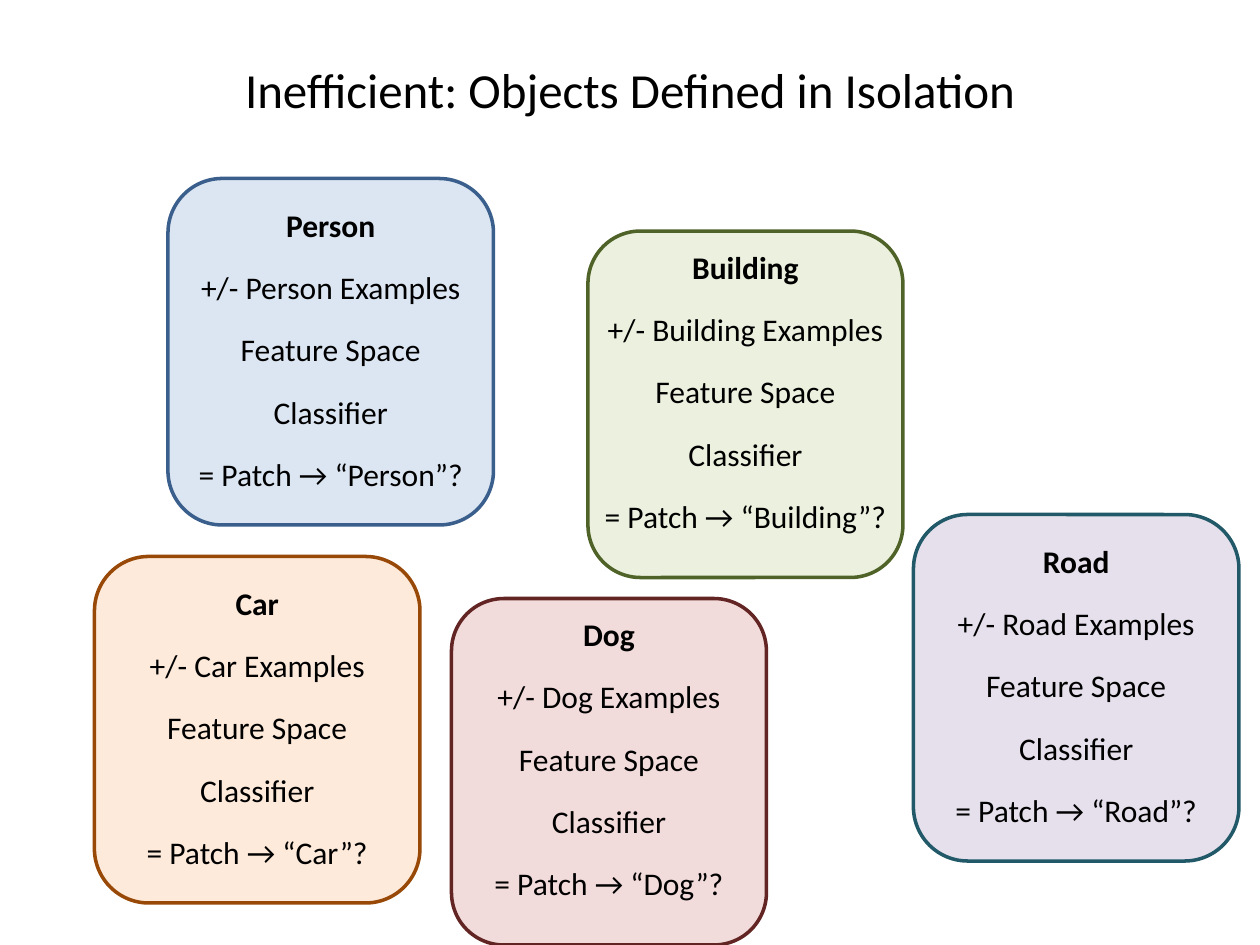
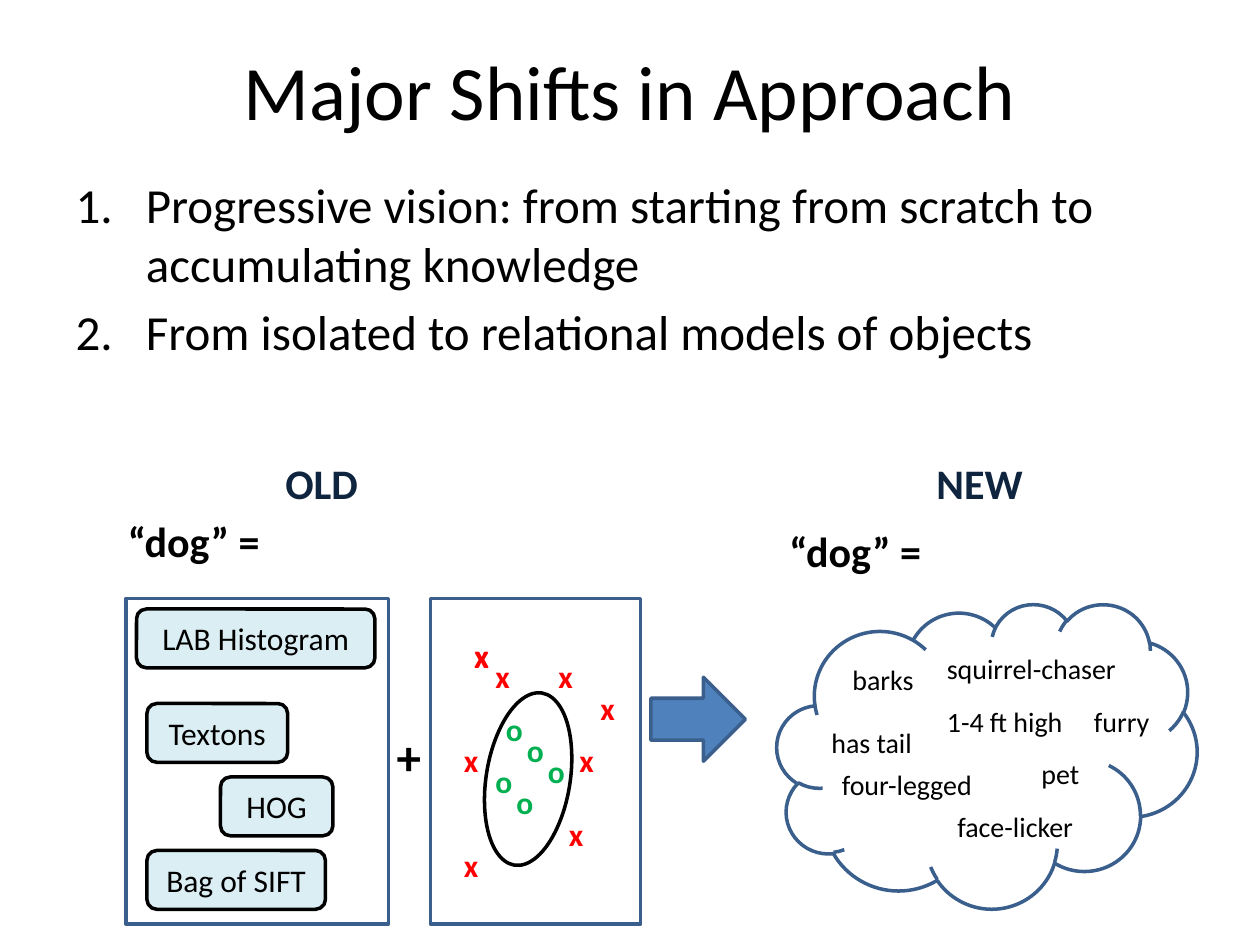
from lxml import etree
from pptx import Presentation
from pptx.dml.color import RGBColor
from pptx.enum.shapes import MSO_SHAPE
from pptx.enum.text import MSO_ANCHOR, PP_ALIGN
from pptx.oxml.ns import qn
from pptx.util import Emu, Pt

ROUNDED = MSO_SHAPE.ROUNDED_RECTANGLE
RECTANGLE = MSO_SHAPE.RECTANGLE
ELLIPSE = MSO_SHAPE.OVAL
CLOUD = MSO_SHAPE.CLOUD
RIGHT_ARROW = MSO_SHAPE.RIGHT_ARROW
CENTER, LEFT = PP_ALIGN.CENTER, PP_ALIGN.LEFT
MIDDLE = MSO_ANCHOR.MIDDLE

PX = 7620  # 120 px to the inch
PAGE_SIZE = (1200, 900)
TITLE_BOX = (60, 10, 1080, 150)
TITLE_ONLY, TITLE_AND_CONTENT = 5, 1

FONT = "Calibri"
BLACK, NAVY = "000000", "0F243E"
OUTLINE, ARROW_BLUE, CHIP_BLUE = "3A5F8C", "4F81BD", "DBEEF4"
RED, GREEN = "FF0000", "00B050"

# name, box, text offset from the top, fill, outline
CARDS = [
    ("Person", (160, 170, 310, 330), 20, "DCE6F2", OUTLINE),
    ("Car", (90, 530, 310, 330), 20, "FDEADA", "984807"),
    ("Road", (870, 490, 310, 330), 20, "E6E0EC", "215968"),
    ("Dog", (430, 570, 300, 330), 10, "F2DCDB", "632523"),
    ("Building", (560, 220, 300, 330), 10, "EBF1DE", "4F6228"),
]
SHIFTS = [
    "Progressive vision: from starting from scratch to accumulating knowledge",
    "From isolated to relational models of objects",
]
# Offsets below are relative to the panel that holds the parts
FEATURES = [
    ("LAB Histogram", 10, 10, 227),
    ("Textons", 20, 100, 134),
    ("Bag of SIFT", 20, 240, 170),
    ("HOG", 90, 170, 107),
]
NEGATIVES = [(30, 31), (30, 30), (50, 50), (110, 50), (20, 130),
             (150, 80), (130, 130), (120, 200), (20, 230)]
POSITIVES = [(60, 100), (80, 120), (100, 140), (70, 170), (50, 150)]
ATTRIBUTES = [
    ("barks", 60, 50, 83),
    ("1-4 ft high", 150, 90, 136),
    ("four-legged", 50, 150, 150),
    ("furry", 290, 90, 78),
    ("face-licker", 160, 190, 136),
    ("squirrel-chaser", 150, 40, 187),
    ("pet", 240, 140, 61),
    ("has tail", 40, 110, 102),
]


def color(value):
    return RGBColor.from_string(value)


def emu(box):
    return [Emu(length * PX) for length in box]


def place(shape, box):
    shape.left, shape.top, shape.width, shape.height = emu(box)


def format_para(para, size, ink=BLACK, bold=False, align=LEFT):
    para.alignment = align
    for span in para.runs:
        span.font.name = FONT
        span.font.size = Pt(size)
        span.font.bold = bold
        span.font.color.rgb = color(ink)


def add_outline(page, kind, box, fill=None, line=OUTLINE):
    shape = page.shapes.add_shape(kind, *emu(box))
    shape.shadow.inherit = False
    if fill:
        shape.fill.solid()
        shape.fill.fore_color.rgb = color(fill)
    else:
        shape.fill.background()
    shape.line.color.rgb = color(line)
    shape.line.width = Pt(2)
    return shape


def add_label(page, text, box, size, ink=BLACK, bold=False):
    frame = page.shapes.add_textbox(*emu(box)).text_frame
    frame.word_wrap = False
    frame.text = text
    format_para(frame.paragraphs[0], size, ink, bold)


def add_page(deck, layout, title, size):
    page = deck.slides.add_slide(deck.slide_layouts[layout])
    place(page.shapes.title, TITLE_BOX)
    frame = page.shapes.title.text_frame
    frame.text = title
    frame.vertical_anchor = MIDDLE
    format_para(frame.paragraphs[0], size, align=CENTER)
    return page


def add_card(page, name, box, text_offset, fill, line):
    left, top, width, _ = box
    add_outline(page, ROUNDED, box, fill, line)
    frame = page.shapes.add_textbox(*emu((left, top + text_offset, width, 290))).text_frame
    frame.word_wrap = True
    frame.text = "\n".join([name, f"+/- {name} Examples", "Feature Space",
                            "Classifier", f"= Patch → “{name}”?"])
    for index, para in enumerate(frame.paragraphs):
        format_para(para, 18, bold=index == 0, align=CENTER)
        para.space_before = Pt(14 if index else 0)


def add_numbered_list(page, items, box):
    body = page.placeholders[1]
    place(body, box)
    body.text_frame.text = "\n".join(items)
    for para in body.text_frame.paragraphs:
        format_para(para, 28)
        properties = para._p.get_or_add_pPr()
        properties.set("marL", str(67 * PX))
        properties.set("indent", str(-67 * PX))
        etree.SubElement(properties, qn("a:buFont"), typeface="+mj-lt")
        etree.SubElement(properties, qn("a:buAutoNum"), type="arabicPeriod")


def add_feature_panel(page, box):
    left, top = box[:2]
    add_outline(page, RECTANGLE, box)
    for name, x, y, width in FEATURES:
        chip = add_outline(page, ROUNDED, (left + x, top + y, width, 56), CHIP_BLUE, BLACK)
        frame = chip.text_frame
        frame.word_wrap = False
        frame.text = name
        frame.vertical_anchor = MIDDLE
        format_para(frame.paragraphs[0], 18, align=CENTER)


def add_classifier_panel(page, box):
    left, top = box[:2]
    add_outline(page, RECTANGLE, box)
    for mark, ink, width, points in (("x", RED, 38, NEGATIVES), ("o", GREEN, 41, POSITIVES)):
        for x, y in points:
            add_label(page, mark, (left + x, top + y, width, 48), 18, ink, True)
    boundary = add_outline(page, ELLIPSE, (left + 53, top + 89, 80, 166), line=BLACK)
    boundary.rotation = 9.1


def add_attribute_cloud(page, box):
    left, top = box[:2]
    add_outline(page, CLOUD, box)
    for word, x, y, width in ATTRIBUTES:
        add_label(page, word, (left + x, top + y, width, 44), 16)


def build_isolation_page(deck):
    page = add_page(deck, TITLE_ONLY, "Inefficient: Objects Defined in Isolation", 28)
    for card in CARDS:
        add_card(page, *card)


def build_shifts_page(deck):
    page = add_page(deck, TITLE_AND_CONTENT, "Major Shifts in Approach", 44)
    add_numbered_list(page, SHIFTS, (60, 160, 1080, 260))

    # Old approach: features plus a classifier
    add_label(page, "OLD", (260, 430, 94, 60), 24, NAVY, True)
    add_label(page, "“dog” =", (110, 485, 160, 60), 24, bold=True)
    add_feature_panel(page, (120, 570, 250, 310))
    add_label(page, "+", (366, 686, 48, 68), 28, bold=True)
    add_classifier_panel(page, (410, 570, 200, 310))

    # New approach: a cloud of attributes
    add_outline(page, RIGHT_ARROW, (620, 645, 90, 80), ARROW_BLUE)
    add_label(page, "NEW", (880, 430, 107, 60), 24, NAVY, True)
    add_label(page, "“dog” =", (740, 495, 160, 60), 24, bold=True)
    add_attribute_cloud(page, (740, 575, 400, 290))


def main():
    deck = Presentation()
    deck.slide_width, deck.slide_height = emu(PAGE_SIZE)
    build_isolation_page(deck)
    build_shifts_page(deck)
    deck.save("out.pptx")


if __name__ == "__main__":
    main()
